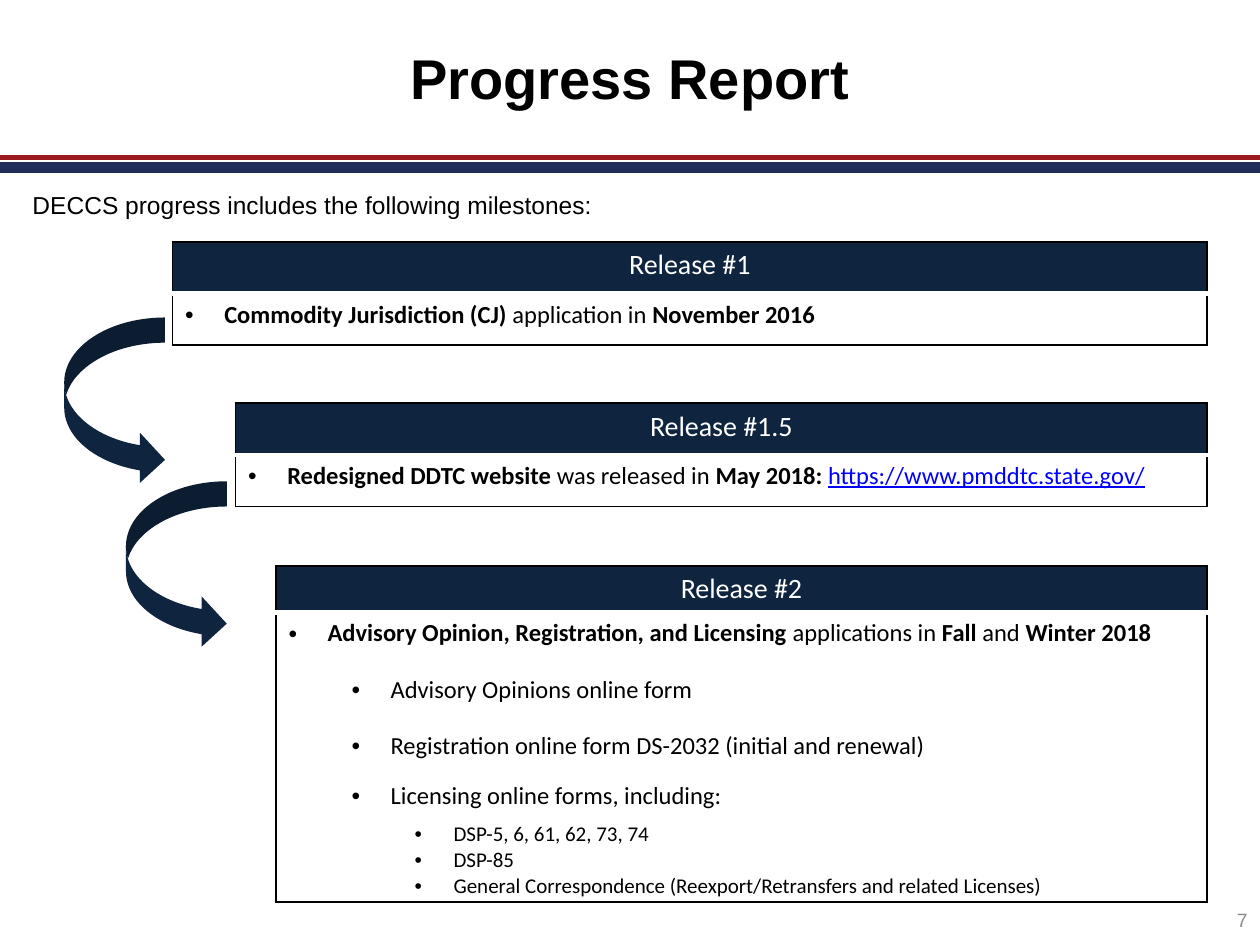
from dataclasses import dataclass

from lxml.etree import SubElement
from pptx import Presentation
from pptx.dml.color import RGBColor
from pptx.enum.shapes import MSO_CONNECTOR, MSO_SHAPE
from pptx.enum.text import MSO_ANCHOR, PP_ALIGN
from pptx.oxml import parse_xml
from pptx.oxml.ns import nsdecls, qn
from pptx.util import Inches, Pt

WIDTH, HEIGHT = 10, 7.5
RIGHT_EDGE = 9.58
INDENT, LEVEL_STEP = 0.31, 0.5
ARROW_SIZE = (0.8, 1.33)
COLORS = {
    "navy": "0F243E", "stripe blue": "222C58", "stripe red": "9B191C",
    "black": "000000", "white": "FFFFFF", "gray": "8C8C8C", "link": "0000FF",
}


@dataclass
class Span:
    text: str
    bold: bool = False
    link: bool = False


@dataclass
class Bullet:
    spans: list[Span]
    level: int = 0
    size: int = 14
    before: int = 0
    after: int = 0


@dataclass
class Release:
    title: str
    left: float
    top: float
    rows: tuple[float, float]
    bullets: list[Bullet]


FORMS = ["DSP-5, 6, 61, 62, 73, 74", "DSP-85",
         "General Correspondence (Reexport/Retransfers and related Licenses)"]
RELEASES = [
    Release("Release #1", 1.37, 1.92, (0.41, 0.41), [
        Bullet([Span("Commodity Jurisdiction (CJ) ", True), Span("application in "),
                Span("November 2016", True)], after=12),
    ]),
    Release("Release #1.5", 1.87, 3.2, (0.41, 0.41), [
        Bullet([Span("Redesigned DDTC website ", True), Span("was released in "),
                Span("May 2018: ", True),
                Span("https://www.pmddtc.state.gov/", link=True)], after=12),
    ]),
    Release("Release #2", 2.19, 4.49, (0.37, 2.3), [
        Bullet([Span("Advisory Opinion, Registration, and Licensing ", True),
                Span("applications in "), Span("Fall ", True), Span("and "),
                Span("Winter 2018", True)], after=12),
        Bullet([Span("Advisory Opinions online form")], 1, before=3, after=12),
        Bullet([Span("Registration online form DS-2032 (initial and renewal)")],
               1, before=3, after=12),
        Bullet([Span("Licensing online forms, including:")], 1, after=6),
        *[Bullet([Span(form)], 2, size=12) for form in FORMS],
    ]),
]


def color(name: str) -> RGBColor:
    return RGBColor.from_string(COLORS[name])


def set_font(font, size: int, name: str, color_name: str) -> None:
    font.size, font.name = Pt(size), name
    font.color.rgb = color(color_name)


def add_stripe(slide, top: float, color_name: str, weight: int) -> None:
    stripe = slide.shapes.add_connector(
        MSO_CONNECTOR.STRAIGHT, 0, Inches(top), Inches(WIDTH), Inches(top))
    stripe.line.color.rgb = color(color_name)
    stripe.line.width = Pt(weight)
    SubElement(stripe._element.spPr, qn("a:effectLst"))


def add_text(slide, frame: tuple, text: str, size: int, color_name: str):
    box = slide.shapes.add_textbox(*map(Inches, frame))
    box.text_frame.word_wrap = True
    para = box.text_frame.paragraphs[0]
    para.text = text
    set_font(para.font, size, "Arial", color_name)
    return box


def add_arrow(slide, left: float, top: float) -> None:
    arrow = slide.shapes.add_shape(
        MSO_SHAPE.CURVED_RIGHT_ARROW, *map(Inches, (left, top, *ARROW_SIZE)))
    arrow.shadow.inherit = False
    arrow.fill.solid()
    arrow.fill.fore_color.rgb = color("navy")
    arrow.line.fill.background()


def style_cell(cell, fill: str, top: tuple, bottom: tuple) -> None:
    """Fill a cell and give it black sides and its own top and bottom borders."""
    cell.fill.solid()
    cell.fill.fore_color.rgb = color(fill)
    side = ("black", 1)
    borders = {"lnL": side, "lnR": side, "lnT": top, "lnB": bottom}
    for position, (tag, (color_name, weight)) in enumerate(borders.items()):
        cell._tc.tcPr.insert(position, parse_xml(
            f'<a:{tag} {nsdecls("a")} w="{Pt(weight)}"><a:solidFill>'
            f'<a:srgbClr val="{COLORS[color_name]}"/></a:solidFill></a:{tag}>'))


def write_bullet(para, bullet: Bullet) -> None:
    properties = para._p.get_or_add_pPr()
    properties.set("marL", str(Inches(INDENT + LEVEL_STEP * bullet.level)))
    properties.set("indent", str(-Inches(INDENT)))
    SubElement(properties, qn("a:buFont"), typeface="Arial")
    SubElement(properties, qn("a:buChar"), char="•")
    para.level = bullet.level
    para.space_before, para.space_after = Pt(bullet.before), Pt(bullet.after)
    set_font(para.font, bullet.size, "Calibri", "black")
    for span in bullet.spans:
        run = para.add_run()
        run.text = span.text
        run.font.bold = span.bold
        if span.link:
            run.font.underline = True
            run.font.color.rgb = color("link")


def add_release(slide, release: Release) -> None:
    frame = (release.left, release.top, RIGHT_EDGE - release.left, sum(release.rows))
    table = slide.shapes.add_table(2, 1, *map(Inches, frame)).table
    table.first_row = table.horz_banding = False
    for row, height in zip(table.rows, release.rows):
        row.height = Inches(height)
    header, body = table.cell(0, 0), table.cell(1, 0)
    style_cell(header, "navy", ("black", 1), ("white", 3))
    style_cell(body, "white", ("white", 1), ("black", 1))
    heading = header.text_frame.paragraphs[0]
    heading.text = release.title
    heading.alignment = PP_ALIGN.CENTER
    set_font(heading.font, 16, "Calibri", "white")
    for index, bullet in enumerate(release.bullets):
        text = body.text_frame
        write_bullet(text.add_paragraph() if index else text.paragraphs[0], bullet)


def main() -> None:
    deck = Presentation()
    deck.slide_width, deck.slide_height = Inches(WIDTH), Inches(HEIGHT)
    slide = deck.slides.add_slide(deck.slide_layouts[5])

    add_stripe(slide, 1.33, "stripe blue", 6)
    add_stripe(slide, 1.25, "stripe red", 3)

    title = slide.shapes.title
    title.left, title.top, title.width, title.height = map(Inches, (0, 0, WIDTH, 1.23))
    title.text_frame.vertical_anchor = MSO_ANCHOR.MIDDLE
    para = title.text_frame.paragraphs[0]
    para.text = "Progress Report"
    para.alignment = PP_ALIGN.CENTER
    set_font(para.font, 32, "Arial", "black")
    para.font.bold = True

    intro = add_text(slide, (0.16, 1.44, 9.57, 0.33),
                     "DECCS progress includes the following milestones:", 14, "black")
    intro.text_frame.paragraphs[0].line_spacing = 1.07

    for release in RELEASES:
        add_release(slide, release)
    add_arrow(slide, 0.51, 2.52)
    add_arrow(slide, 1, 3.82)

    number = add_text(slide, (RIGHT_EDGE, 7.1, WIDTH - RIGHT_EDGE, 0.4), "7", 11, "gray")
    number.text_frame.vertical_anchor = MSO_ANCHOR.MIDDLE
    number.text_frame.paragraphs[0].alignment = PP_ALIGN.RIGHT
    deck.save("out.pptx")


if __name__ == "__main__":
    main()
